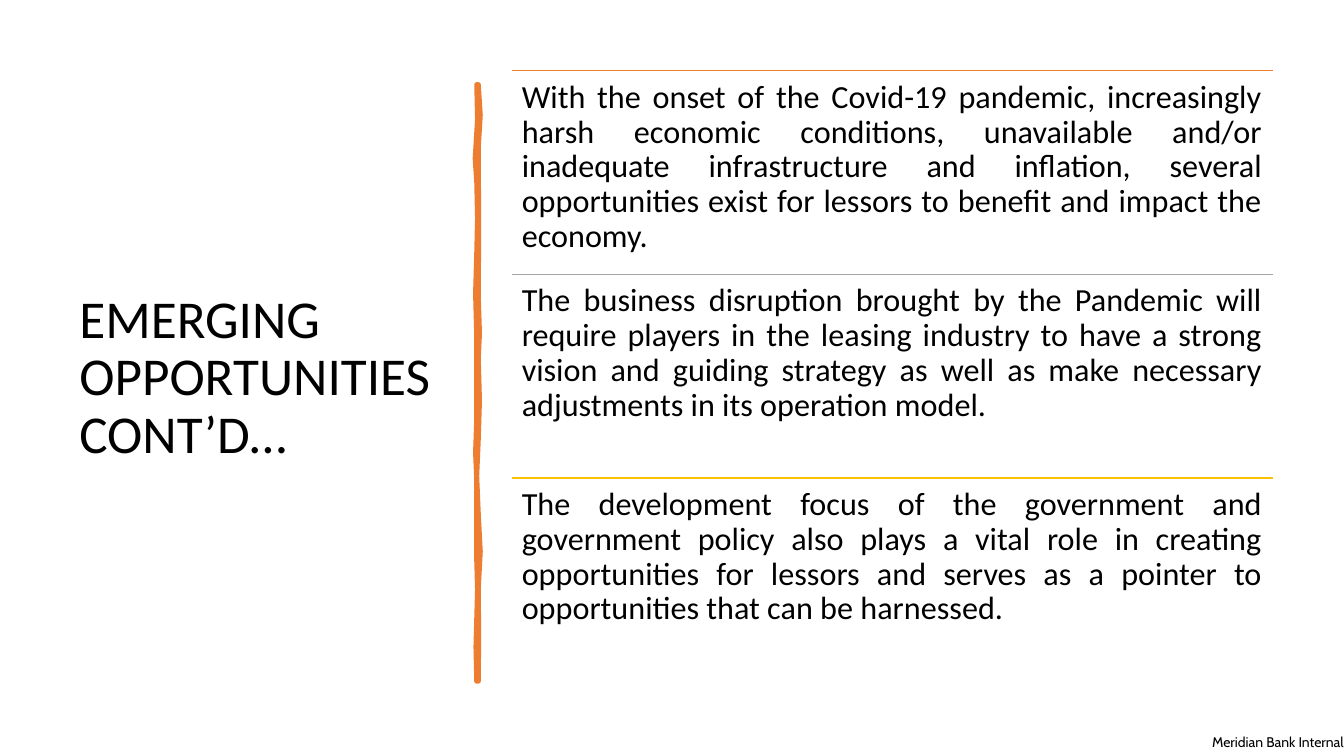
import pptx
import pptx.util
import pptx.dml.color
import pptx.enum.shapes
import pptx.enum.text
import pptx.oxml
from pptx.util import Cm, Pt

ALIGN = pptx.enum.text.PP_ALIGN
ANCHOR = pptx.enum.text.MSO_ANCHOR
ORANGE = "ED7D31"

OPPORTUNITIES = [
    (ORANGE, "With the onset of the Covid-19 pandemic, increasingly harsh "
     "economic conditions, unavailable and/or inadequate infrastructure and "
     "inflation, several opportunities exist for lessors to benefit and "
     "impact the economy."),
    ("A5A5A5", "The business disruption brought by the Pandemic will require "
     "players in the leasing industry to have a strong vision and guiding "
     "strategy as well as make necessary adjustments in its operation model."),
    ("FFC000", "The development focus of the government and government policy "
     "also plays a vital role in creating opportunities for lessors and "
     "serves as a pointer to opportunities that can be harnessed."),
]

# Outline of the hand-drawn bar in cm: down the right edge, up the left edge.
BAR_OUTLINE = [
    (12.06, 2.13), (12.11, 2.9), (12.06, 3.71), (12.07, 5.74), (12.06, 7.47),
    (12.09, 8.4), (12.06, 9.04), (12.09, 10.1), (12.06, 11.07), (12.02, 12),
    (12.06, 12.95), (12.11, 13.9), (12.06, 14.83), (12.07, 16), (12.06, 17.17),
    (12.01, 17.17), (11.99, 16.3), (12.01, 15.57), (12.03, 14.85),
    (12.01, 14.15), (12.01, 12.12), (11.98, 11.4), (12.01, 10.54),
    (12.01, 8.51), (11.98, 7.4), (12.01, 6.35), (12.03, 5.5), (12.01, 4.6),
    (11.97, 4), (12.03, 3), (12.01, 2.13),
]


def rgb(hex_colour):
    return pptx.dml.color.RGBColor.from_string(hex_colour)


def add_text(slide, text, box, size, font="Calibri", align=ALIGN.LEFT,
             anchor=ANCHOR.TOP, insets=(0.25, 0.25), line_spacing=0.9):
    """Add a one-paragraph text box; box and (side, top/bottom) insets are in cm."""
    frame = slide.shapes.add_textbox(*map(Cm, box)).text_frame
    frame.word_wrap = True
    frame.vertical_anchor = anchor
    frame.margin_left = frame.margin_right = Cm(insets[0])
    frame.margin_top = frame.margin_bottom = Cm(insets[1])
    paragraph = frame.paragraphs[0]
    paragraph.text = text
    paragraph.alignment = align
    paragraph.line_spacing = line_spacing
    paragraph.font.name = font
    paragraph.font.size = Pt(size)
    paragraph.font.color.rgb = rgb("000000")


def add_rule(slide, left, top, width, colour):
    rule = slide.shapes.add_connector(
        pptx.enum.shapes.MSO_CONNECTOR.STRAIGHT,
        Cm(left), Cm(top), Cm(left + width), Cm(top))
    rule.line.color.rgb = rgb(colour)
    rule.line.width = Pt(1)
    properties = rule._element.spPr
    properties.append(properties.makeelement(pptx.oxml.ns.qn("a:effectLst"), {}))


def add_sketched_bar(slide):
    points = [(Cm(x), Cm(y)) for x, y in BAR_OUTLINE]
    builder = slide.shapes.build_freeform(*points[0])
    builder.add_line_segments(points[1:], close=True)
    bar = builder.convert_to_shape()
    bar.shadow.inherit = False
    bar.fill.solid()
    bar.fill.fore_color.rgb = rgb(ORANGE)
    bar.line.color.rgb = rgb(ORANGE)
    bar.line.width = Pt(3.25)
    outline = bar.line._get_or_add_ln()
    outline.append(outline.makeelement(pptx.oxml.ns.qn("a:round"), {}))


def add_opportunities(slide, left=12.9, top=1.78, width=19.18, row_height=5.13):
    for row, (colour, text) in enumerate(OPPORTUNITIES):
        row_top = top + row * row_height
        add_rule(slide, left, row_top, width, colour)
        add_text(slide, text, (left, row_top, width, row_height), 23,
                 align=ALIGN.JUSTIFY)


def main():
    presentation = pptx.Presentation()
    presentation.slide_width = Cm(33.87)
    presentation.slide_height = Cm(19.05)
    slide = presentation.slides.add_slide(presentation.slide_layouts[6])

    add_text(slide, "Meridian Bank Internal", (29.82, 18.34, 4.04, 0.71), 10,
             font="Cabin", align=ALIGN.RIGHT, anchor=ANCHOR.MIDDLE,
             insets=(0, 0), line_spacing=1.0)
    add_text(slide, "EMERGING OPPORTUNITIES CONT’D…", (1.75, 1.78, 9.5, 15.52),
             38, anchor=ANCHOR.MIDDLE, insets=(0.25, 0.13))
    add_sketched_bar(slide)
    add_opportunities(slide)

    presentation.save("out.pptx")


if __name__ == "__main__":
    main()
